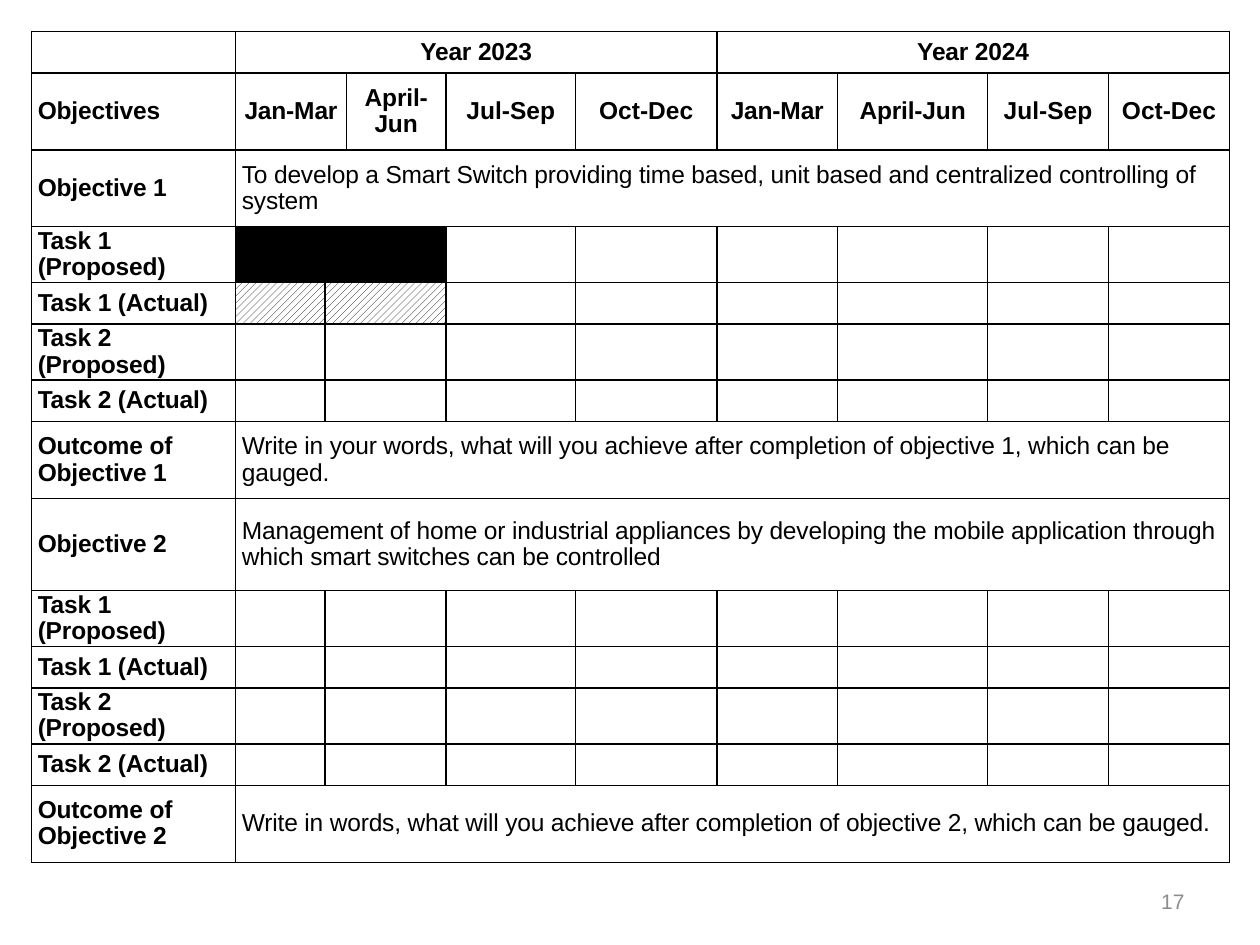
from dataclasses import dataclass

from lxml.etree import SubElement
from pptx import Presentation
from pptx.dml.color import RGBColor
from pptx.enum.dml import MSO_PATTERN
from pptx.enum.text import MSO_ANCHOR, PP_ALIGN
from pptx.oxml.ns import qn
from pptx.util import Inches, Pt

BLACK, WHITE, GREY = "000000", "FFFFFF", "8C8C8C"
FONT = "Arial"
COL_WIDTHS = [1.62, 0.71, 0.17, 0.79, 1.03, 1.12, 0.96, 1.19, 0.96, 0.96]
QUARTERS = ["Jan-Mar", "April-Jun", "Jul-Sep", "Oct-Dec"]
SHORT, TALL = 0.33, 0.61


@dataclass
class Entry:
    """A cell at a column, spanning some columns."""
    col: int
    text: str = ""
    span: int = 1
    bold: bool = True
    center: bool = False
    tight: bool = True
    after: int = 0
    fill: str = ""


@dataclass
class Row:
    height: float
    entries: list[Entry]


def rgb(color: str) -> RGBColor:
    return RGBColor.from_string(color)


def statement(height: float, label: str, text: str, after: int = 6) -> Row:
    """A label followed by one sentence across all quarters."""
    return Row(height, [Entry(0, label), Entry(1, text, 9, bold=False, after=after)])


def task(label: str, fill: str = "") -> Row:
    """A label followed by one cell a quarter, the first two filled if asked."""
    return Row(SHORT, [Entry(0, label), Entry(1, fill=fill), Entry(2, span=2, fill=fill)])


def tasks(proposed: str = "", actual: str = "") -> list[Row]:
    return [task("Task 1 (Proposed)", proposed), task("Task 1 (Actual)", actual),
            task("Task 2 (Proposed)"), task("Task 2 (Actual)")]


def quarter_header() -> Row:
    starts = [1, 3, 4, 5, 6, 7, 8, 9]
    entries = [Entry(col, QUARTERS[i % 4], 2 if col == 1 else 1,
                     center=True, tight=i % 4 < 2)
               for i, col in enumerate(starts)]
    return Row(TALL, [Entry(0, "Objectives"), *entries])


ROWS = [
    Row(SHORT, [Entry(1, "Year 2023", 5, center=True),
                Entry(6, "Year 2024", 4, center=True, after=6)]),
    quarter_header(),
    statement(TALL, "Objective 1", "To develop a Smart Switch providing time based, "
              "unit based and centralized controlling of system", after=0),
    *tasks("solid", "hatch"),
    statement(TALL, "Outcome of Objective 1", "Write in your words, what will you achieve "
              "after completion of objective 1, which can be gauged."),
    statement(0.73, "Objective 2", "Management of home or industrial appliances by developing "
              "the mobile application through which smart switches can be controlled"),
    *tasks(),
    statement(TALL, "Outcome of Objective 2", "Write in words, what will you achieve "
              "after completion of objective 2, which can be gauged."),
]


def format_cell(cell) -> None:
    """Give a cell its margins, a thin black border and no fill."""
    layout = {"margin_left": Inches(0.05), "margin_right": Inches(0.05),
              "margin_top": 0, "margin_bottom": 0, "vertical_anchor": MSO_ANCHOR.MIDDLE}
    for name, value in layout.items():
        setattr(cell, name, value)
    tcPr = cell._tc.get_or_add_tcPr()
    for side in ("lnL", "lnR", "lnT", "lnB"):
        ln = SubElement(tcPr, qn(f"a:{side}"), w=str(Pt(1)))
        SubElement(SubElement(ln, qn("a:solidFill")), qn("a:srgbClr"), val=BLACK)
    cell.fill.background()


def add_run(p, text: str, size: int, color: str, bold: bool = False):
    r = p.add_run()
    r.text = text
    for name, value in {"name": FONT, "size": Pt(size), "bold": bold}.items():
        setattr(r.font, name, value)
    r.font.color.rgb = rgb(color)
    return r


def fill_cell(cell, kind: str) -> None:
    if kind == "solid":
        cell.fill.solid()
        cell.fill.fore_color.rgb = rgb(BLACK)
    elif kind == "hatch":
        cell.fill.patterned()
        cell.fill.pattern = MSO_PATTERN.WIDE_UPWARD_DIAGONAL
        cell.fill.fore_color.rgb = rgb(BLACK)
        cell.fill.back_color.rgb = rgb(WHITE)


def write_entry(table, row: int, entry: Entry) -> None:
    cell = table.cell(row, entry.col)
    if entry.span > 1:
        cell.merge(table.cell(row, entry.col + entry.span - 1))
    fill_cell(cell, entry.fill)
    if not entry.text:
        return
    p = cell.text_frame.paragraphs[0]
    p.alignment = PP_ALIGN.CENTER if entry.center else PP_ALIGN.LEFT
    p.space_after = Pt(entry.after)
    r = add_run(p, entry.text, 14, BLACK, entry.bold)
    if entry.tight:
        p.line_spacing = 0.95
        r._r.get_or_add_rPr().set("spc", "-10")


def add_schedule(s) -> None:
    frame = s.shapes.add_table(len(ROWS), len(COL_WIDTHS), Inches(0.25), Inches(0.25),
                               Inches(9.5), Inches(6.17))
    table = frame.table
    table.first_row = table.horz_banding = False
    for column, width in zip(table.columns, COL_WIDTHS):
        column.width = Inches(width)
    for cell in table.iter_cells():
        format_cell(cell)
    for i, row in enumerate(ROWS):
        table.rows[i].height = Inches(row.height)
        for entry in row.entries:
            write_entry(table, i, entry)


def add_page_number(s, number: str) -> None:
    sp = s.shapes.add_textbox(Inches(7.17), Inches(6.95), Inches(2.33), Inches(0.4))
    tf = sp.text_frame
    tf.word_wrap = True
    tf.vertical_anchor = MSO_ANCHOR.MIDDLE
    p = tf.paragraphs[0]
    p.alignment = PP_ALIGN.RIGHT
    add_run(p, number, 12, GREY)


def main() -> None:
    prs = Presentation()
    prs.slide_width, prs.slide_height = Inches(10), Inches(7.5)
    s = prs.slides.add_slide(prs.slide_layouts[6])
    add_page_number(s, "17")
    add_schedule(s)
    prs.save("out.pptx")


if __name__ == "__main__":
    main()
